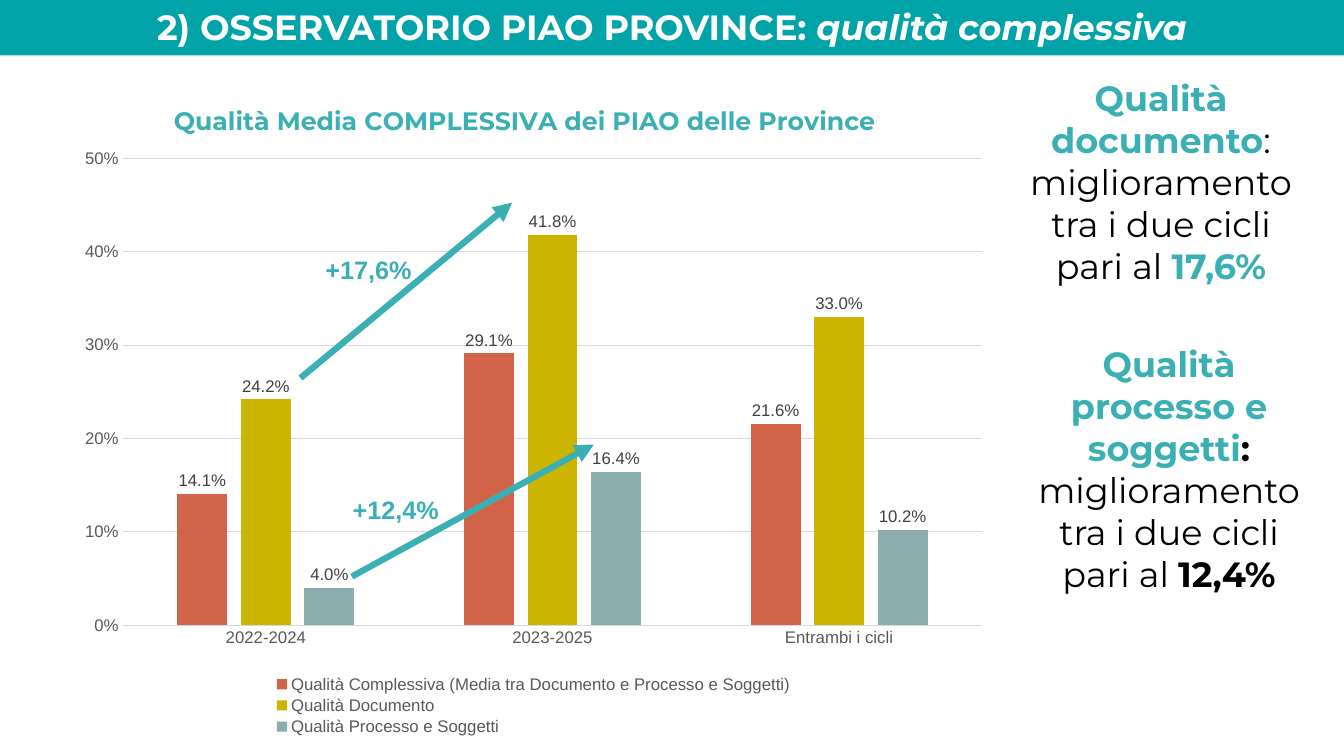
from dataclasses import dataclass

import lxml.etree
import pptx
import pptx.chart.data
import pptx.dml.color
import pptx.enum.chart
import pptx.enum.shapes
import pptx.enum.text
import pptx.oxml.ns
import pptx.util
from pptx.util import Inches

qn = pptx.oxml.ns.qn


@dataclass(frozen=True)
class Theme:
    heading: str = "Montserrat"
    body: str = "Arial"
    banner: str = "00A3A8"
    accent: str = "3BB0B4"
    white: str = "FFFFFF"
    black: str = "000000"
    axis_text: str = "595959"
    label_text: str = "404040"
    grid: str = "D9D9D9"
    series: tuple = ("D16349", "CCB400", "8CADAE")
    large: int = 25
    medium: int = 18
    small: int = 12


theme = Theme()
rgb = pptx.dml.color.RGBColor.from_string


def style(font, name, size, color, bold=False, italic=False):
    font.name, font.size = name, pptx.util.Pt(size)
    font.bold, font.italic = bold, italic
    font.color.rgb = rgb(color)


def place(element, index, **fractions):
    """Give a chart part a manual layout, as fractions of the chart area."""
    for old in element.findall(qn("c:layout")):
        element.remove(old)
    layout = lxml.etree.Element(qn("c:layout"))
    manual = lxml.etree.SubElement(layout, qn("c:manualLayout"))
    settings = {"xMode": "edge", "yMode": "edge", **fractions}
    if index == 0:
        settings = {"layoutTarget": "inner", **settings}
    for tag, value in settings.items():
        lxml.etree.SubElement(manual, qn("c:" + tag), val=str(value))
    element.insert(index, layout)


deck = pptx.Presentation()
deck.slide_width, deck.slide_height = Inches(13.33), Inches(7.5)
page = deck.slides.add_slide(deck.slide_layouts[5])

# Banner title
title = page.shapes.title
title.left, title.top = Inches(0), Inches(-0.03)
title.width, title.height = Inches(13.33), Inches(0.58)
title.fill.solid()
title.fill.fore_color.rgb = rgb(theme.banner)
title.text_frame.auto_size = pptx.enum.text.MSO_AUTO_SIZE.NONE
title.text_frame.vertical_anchor = pptx.enum.text.MSO_ANCHOR.MIDDLE
para = title.text_frame.paragraphs[0]
para.alignment = pptx.enum.text.PP_ALIGN.CENTER
for text, italic in (("2) OSSERVATORIO PIAO PROVINCE: ", False), ("qualità complessiva", True)):
    span = para.add_run()
    span.text = text
    style(span.font, theme.heading, theme.large, theme.white, True, italic)

# Chart
data = pptx.chart.data.CategoryChartData(number_format="0.0%")
data.categories = ["2022-2024", "2023-2025", "Entrambi i cicli"]
data.add_series("Qualità Complessiva (Media tra Documento e Processo e Soggetti)", (0.141, 0.291, 0.216))
data.add_series("Qualità Documento", (0.242, 0.418, 0.33))
data.add_series("Qualità Processo e Soggetti", (0.04, 0.164, 0.102))
chart = page.shapes.add_chart(
    pptx.enum.chart.XL_CHART_TYPE.COLUMN_CLUSTERED,
    Inches(0.66), Inches(0.71), Inches(9.27), Inches(6.62), data).chart
style(chart.font, theme.body, theme.small, theme.axis_text)

chart.has_title = True
chart.chart_title.include_in_layout = False
chart.chart_title.text_frame.text = "Qualità Media COMPLESSIVA dei PIAO delle Province"
span = chart.chart_title.text_frame.paragraphs[0].runs[0]
style(span.font, theme.heading, theme.medium, theme.accent, True)

chart.has_legend = True
chart.legend.position = pptx.enum.chart.XL_LEGEND_POSITION.BOTTOM
chart.legend.include_in_layout = False
style(chart.legend.font, theme.body, theme.small, theme.axis_text)

plot = chart.plots[0]
plot.gap_width, plot.overlap, plot.vary_by_categories = 219, -27, False
for series, color in zip(plot.series, theme.series):
    series.format.fill.solid()
    series.format.fill.fore_color.rgb = rgb(color)
    series.invert_if_negative = False
plot.has_data_labels = True
labels = plot.data_labels
labels.show_value = True
labels.number_format, labels.number_format_is_linked = "0.0%", False
labels.position = pptx.enum.chart.XL_LABEL_POSITION.OUTSIDE_END
style(labels.font, theme.body, theme.small, theme.label_text)

values = chart.value_axis
values.minimum_scale, values.maximum_scale, values.major_unit = 0, 0.5, 0.1
values.tick_labels.number_format = "0%"
values.tick_labels.number_format_is_linked = False
values.format.line.fill.background()
for axis in (values, chart.category_axis):
    axis.major_tick_mark = axis.minor_tick_mark = pptx.enum.chart.XL_TICK_MARK.NONE
    style(axis.tick_labels.font, theme.body, theme.small, theme.axis_text)
for line in (values.major_gridlines.format.line, chart.category_axis.format.line):
    line.color.rgb = rgb(theme.grid)
    line.width = pptx.util.Pt(0.75)

place(chart.element.find(".//" + qn("c:plotArea")), 0, x=0.06, y=0.13, w=0.92, h=0.7)
place(chart.element.find(".//" + qn("c:title")), 1, x=0.11, y=0.04)
place(chart.element.find(".//" + qn("c:legend")), 1, x=0.22, y=0.9, w=0.56, h=0.1)

# Growth arrows
for start_x, start_y, end_x, end_y in ((2.98, 3.75, 5.08, 2.01), (3.49, 5.72, 5.89, 4.41)):
    arrow = page.shapes.add_connector(
        pptx.enum.shapes.MSO_CONNECTOR.STRAIGHT,
        Inches(start_x), Inches(start_y), Inches(end_x), Inches(end_y))
    arrow.line.color.rgb = rgb(theme.accent)
    arrow.line.width = pptx.util.Pt(4.5)
    lxml.etree.SubElement(arrow.line._get_or_add_ln(), qn("a:tailEnd"), type="triangle")
    lxml.etree.SubElement(arrow.element.spPr, qn("a:effectLst"))

# Growth labels and comments: each span is text, colour, bold
center = pptx.enum.text.PP_ALIGN.CENTER
left = pptx.enum.text.PP_ALIGN.LEFT
cycles = [("tra i due cicli", theme.black, False)]
improvement = [("miglioramento", theme.black, False)]
equal_to = ("pari al ", theme.black, False)
text_boxes = (
    (3.13, 2.47, 1.06, 0.4, theme.body, theme.medium, left, [[("+17,6%", theme.accent, True)]]),
    (3.4, 4.85, 1.06, 0.4, theme.body, theme.medium, left, [[("+12,4%", theme.accent, True)]]),
    (9.78, 0.71, 3.47, 2.2, theme.heading, theme.large, center, [
        [("Qualità documento", theme.accent, True), (":", theme.black, False)],
        improvement, cycles, [equal_to, ("17,6%", theme.accent, True)]]),
    (9.86, 3.35, 3.47, 2.63, theme.heading, theme.large, center, [
        [("Qualità", theme.accent, True)],
        [("processo e soggetti", theme.accent, True), (":", theme.black, True)],
        improvement, cycles, [equal_to, ("12,4%", theme.black, True)]]),
)
for x, y, width, height, font, size, alignment, lines in text_boxes:
    box = page.shapes.add_textbox(Inches(x), Inches(y), Inches(width), Inches(height))
    box.text_frame.word_wrap = True
    for number, spans in enumerate(lines):
        para = box.text_frame.add_paragraph() if number else box.text_frame.paragraphs[0]
        para.alignment = alignment
        for text, color, bold in spans:
            span = para.add_run()
            span.text = text
            style(span.font, font, size, color, bold)

deck.save("out.pptx")
